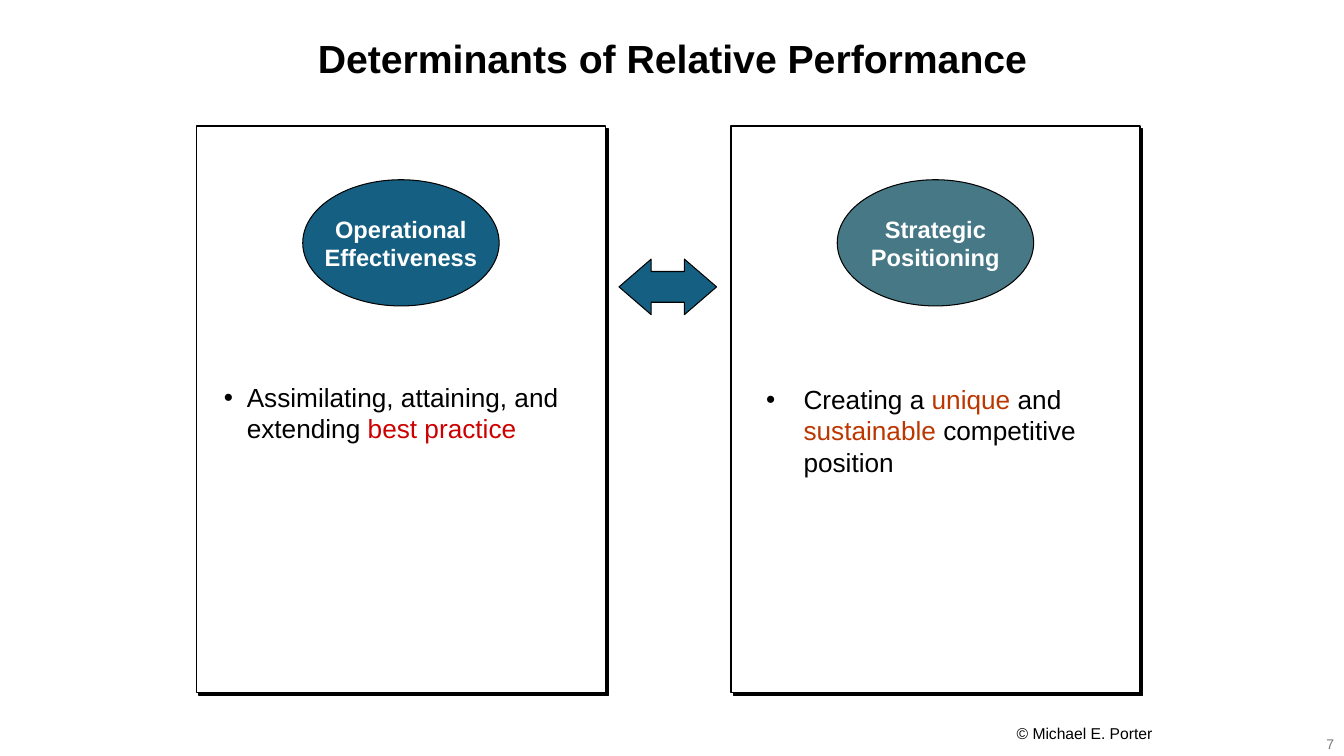
from lxml import etree
from pptx import Presentation
from pptx.dml.color import RGBColor
from pptx.enum.shapes import MSO_SHAPE
from pptx.enum.text import MSO_ANCHOR, PP_ALIGN
from pptx.oxml.ns import qn
from pptx.util import Cm, Pt

RECT = MSO_SHAPE.RECTANGLE
OVAL = MSO_SHAPE.OVAL
ARROW = MSO_SHAPE.LEFT_RIGHT_ARROW
TOP, MIDDLE = MSO_ANCHOR.TOP, MSO_ANCHOR.MIDDLE
LEFT, CENTER, RIGHT = PP_ALIGN.LEFT, PP_ALIGN.CENTER, PP_ALIGN.RIGHT

BLACK, WHITE, BLUE, TEAL = "000000", "FFFFFF", "156082", "467886"
RED, RUST, GRAY = "CC0000", "BC3700", "797979"


def color(code):
    return RGBColor.from_string(code)


def add_form(slide, kind, box, fill, width):
    form = slide.shapes.add_shape(kind, *map(Cm, box))
    form.shadow.inherit = False
    form.fill.solid()
    form.fill.fore_color.rgb = color(fill)
    form.line.color.rgb = color(BLACK)
    form.line.width = Pt(width)
    return form


def add_shade(form):
    effects = form._element.spPr.find(qn("a:effectLst"))
    shade = etree.SubElement(effects, qn("a:outerShdw"), dist=str(Pt(2.8)),
                             dir="2700000", algn="ctr", rotWithShape="0")
    etree.SubElement(shade, qn("a:srgbClr"), val=BLACK)


def set_frame(frame, pad, anchor=TOP, wrap=True):
    frame.margin_left = frame.margin_right = Cm(pad[0])
    frame.margin_top = frame.margin_bottom = Cm(pad[1])
    frame.vertical_anchor = anchor
    frame.word_wrap = wrap


def add_runs(para, runs, size, align, bold=False):
    para.alignment = align
    for text, code in runs:
        run = para.add_run()
        run.text = text
        run.font.name = "Arial"
        run.font.size = Pt(size)
        run.font.bold = bold
        run.font.color.rgb = color(code)


def add_text(slide, box, runs, size, align, pad=(0.25, 0.13), anchor=TOP, bold=False):
    frame = slide.shapes.add_textbox(*map(Cm, box)).text_frame
    set_frame(frame, pad, anchor)
    para = frame.paragraphs[0]
    add_runs(para, runs, size, align, bold)
    return para


def add_bullet(para, margin, hang):
    props = para._p.get_or_add_pPr()
    props.set("marL", str(Cm(margin)))
    props.set("indent", str(-Cm(hang)))
    etree.SubElement(props, qn("a:buFont"), typeface="Arial")
    etree.SubElement(props, qn("a:buChar"), char="•")


def add_panel(slide, box, fill, words, runs, shift, wide, pad, margin, hang):
    left, top, width, height = box
    add_shade(add_form(slide, RECT, box, WHITE, 1))

    oval_w, oval_h = 4.95, 3.18
    spot = (left + (width - oval_w) / 2, top + 1.35, oval_w, oval_h)
    frame = add_form(slide, OVAL, spot, fill, 0.75).text_frame
    set_frame(frame, (0.25, 0.13), MIDDLE, False)
    for index, word in enumerate(words):
        para = frame.add_paragraph() if index else frame.paragraphs[0]
        add_runs(para, [(word, WHITE)], 16.9, CENTER, True)

    place = (left + shift, top + 6.3, wide, 2.8)
    add_bullet(add_text(slide, place, runs, 18.7, LEFT, pad), margin, hang)


def add_arrow(slide, box):
    arrow = add_form(slide, ARROW, box, BLUE, 0.75)
    arrow.adjustments[0] = 0.554
    arrow.adjustments[1] = 0.58


def add_title(slide, box):
    para = add_text(slide, box, [("Determinants of Relative Performance", BLACK)],
                    28, CENTER, (0.1, 0.05), bold=True)
    para.line_spacing = 0.9


def add_footer(slide, width):
    add_text(slide, (20.96, 18.11, 8.33, 0.74),
             [("© Michael E. Porter", BLACK)], 11.2, RIGHT)
    add_text(slide, (width - 7.62, 18.49, 7.62, 0.53),
             [("7", GRAY)], 10, RIGHT, anchor=MIDDLE)


def main():
    deck = Presentation()
    width, height = 33.87, 19.05
    deck.slide_width, deck.slide_height = Cm(width), Cm(height)
    slide = deck.slides.add_slide(deck.slide_layouts[6])

    add_title(slide, (6.25, 0.94, 21.39, 1.17))
    add_panel(slide, (4.95, 3.18, 10.31, 14.27), BLUE,
              ("Operational", "Effectiveness"),
              [("Assimilating, attaining, and extending ", BLACK),
               ("best practice", RED)],
              0.46, 9.4, (0.23, 0.13), 0.58, 0.58)
    add_panel(slide, (18.42, 3.18, 10.31, 14.27), TEAL,
              ("Strategic", "Positioning"),
              [("Creating a ", BLACK), ("unique", RUST), (" and ", BLACK),
               ("sustainable", RUST), (" competitive position", BLACK)],
              -0.38, 11.07, (0.36, 0.18), 1.85, 0.94)
    add_arrow(slide, (15.6, 6.53, 2.46, 1.4))
    add_footer(slide, width)
    deck.save("out.pptx")


if __name__ == "__main__":
    main()
